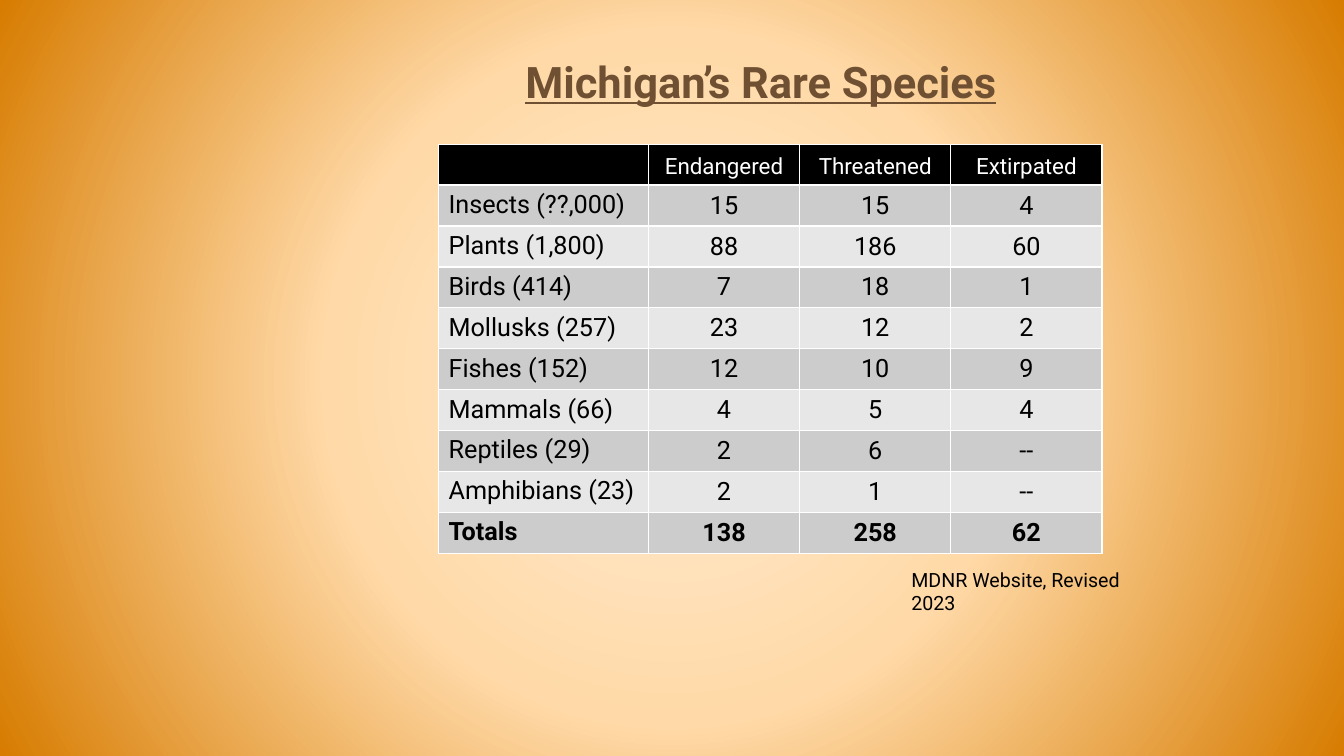
"""Build a slide with a table of Michigan's rare species."""
from dataclasses import dataclass

from pptx import Presentation, oxml
from pptx import util as u
from pptx.dml.color import RGBColor
from pptx.enum import text
from pptx.oxml import ns

SLIDE_WIDTH, SLIDE_HEIGHT = u.Inches(13.33), u.Inches(7.5)
FONT = "Roboto"
BLACK = RGBColor(0x00, 0x00, 0x00)
WHITE = RGBColor(0xFF, 0xFF, 0xFF)
BROWN = RGBColor(0x70, 0x50, 0x32)
DARK_BAND = RGBColor(0xCC, 0xCC, 0xCC)
LIGHT_BAND = RGBColor(0xE7, 0xE7, 0xE7)
CREAM = RGBColor(0xFF, 0xEC, 0xD3)
PEACH = RGBColor(0xFF, 0xD9, 0xA7)
ORANGE = RGBColor(0xD7, 0x7C, 0x01)
LEFT, CENTER = text.PP_ALIGN.LEFT, text.PP_ALIGN.CENTER
TOP, MIDDLE, BOTTOM = (
    text.MSO_ANCHOR.TOP, text.MSO_ANCHOR.MIDDLE, text.MSO_ANCHOR.BOTTOM)


@dataclass(frozen=True)
class Box:
    """A frame in percent of the slide's width and height."""
    left: float
    top: float
    width: float
    height: float

    def lengths(self) -> tuple[int, int, int, int]:
        """Return left, top, width and height as slide lengths."""
        return (across(self.left), down(self.top),
                across(self.width), down(self.height))


@dataclass(frozen=True)
class Stop:
    """A gradient stop with position and opacity in percent."""
    position: int
    color: RGBColor
    opacity: int = 100


@dataclass(frozen=True)
class Species:
    """One row of species counts."""
    group: str
    endangered: str
    threatened: str
    extirpated: str
    bold: bool = False

    def values(self) -> tuple[str, str, str, str]:
        """Return the texts of the row from left to right."""
        return self.group, self.endangered, self.threatened, self.extirpated


TITLE_BOX = Box(21.91, 2.4, 69.39, 16.67)
TABLE_BOX = Box(32.63, 19.07, 49.37, 54.13)
NOTE_BOX = Box(67.07, 74.4, 20.26, 4.53)
COLUMN_SHARES = (15.62, 11.25, 11.25, 11.25)
STOPS = (Stop(0, CREAM), Stop(45, PEACH, 92), Stop(100, ORANGE, 68))
ROWS = (
    Species("", "Endangered", "Threatened", "Extirpated"),
    Species("Insects (??,000)", "15", "15", "4"),
    Species("Plants (1,800)", "88", "186", "60"),
    Species("Birds (414)", "7", "18", "1"),
    Species("Mollusks (257)", "23", "12", "2"),
    Species("Fishes (152)", "12", "10", "9"),
    Species("Mammals (66)", "4", "5", "4"),
    Species("Reptiles (29)", "2", "6", "--"),
    Species("Amphibians (23)", "2", "1", "--"),
    Species("Totals", "138", "258", "62", bold=True),
)


def across(percent: float) -> int:
    """Return a share of the slide's width."""
    return round(SLIDE_WIDTH * percent / 100)


def down(percent: float) -> int:
    """Return a share of the slide's height."""
    return round(SLIDE_HEIGHT * percent / 100)


def write(frame, words: str, *, size: float, color: RGBColor = BLACK,
          bold: bool = False, underline: bool = False, align=LEFT) -> None:
    """Write one formatted paragraph into a text frame."""
    paragraph = frame.paragraphs[0]
    paragraph.alignment = align
    font = paragraph.font
    if words:
        run = paragraph.add_run()
        run.text = words
        font = run.font
    font.name, font.size = FONT, u.Pt(size)
    font.bold, font.underline = bold, underline
    font.color.rgb = color


def paint_background(slide) -> None:
    """Fill the background with a circular gradient."""
    slide.background.fill.solid()
    properties = slide.element.find(".//" + ns.qn("p:bgPr"))
    stops = "".join(
        f'<a:gs pos="{stop.position * 1000}"><a:srgbClr val="{stop.color}">'
        f'<a:alpha val="{stop.opacity * 1000}"/></a:srgbClr></a:gs>'
        for stop in STOPS)
    gradient = oxml.parse_xml(
        f'<a:gradFill {ns.nsdecls("a")} rotWithShape="1">'
        f'<a:gsLst>{stops}</a:gsLst><a:path path="circle">'
        '<a:fillToRect l="50000" t="50000" r="50000" b="50000"/>'
        '</a:path></a:gradFill>')
    properties.replace(properties[0], gradient)


def outline_cell(cell, color: RGBColor, width: float) -> None:
    """Draw all four borders of a table cell."""
    properties = cell._tc.get_or_add_tcPr()
    for index, side in enumerate(("lnL", "lnR", "lnT", "lnB")):
        properties.insert(index, oxml.parse_xml(
            f'<a:{side} {ns.nsdecls("a")} w="{u.Pt(width)}"><a:solidFill>'
            f'<a:srgbClr val="{color}"/></a:solidFill></a:{side}>'))


def add_title(slide) -> None:
    """Place and format the slide's title."""
    title = slide.shapes.title
    title.left, title.top, title.width, title.height = TITLE_BOX.lengths()
    title.text_frame.vertical_anchor = MIDDLE
    write(title.text_frame, "Michigan’s Rare Species", size=31, color=BROWN,
          bold=True, underline=True, align=CENTER)


def add_species_table(slide) -> None:
    """Add the table of species counts."""
    table = slide.shapes.add_table(
        len(ROWS), len(COLUMN_SHARES), *TABLE_BOX.lengths()).table
    for column, share in zip(table.columns, COLUMN_SHARES):
        column.width = across(share)
    for row_index, species in enumerate(ROWS):
        table.rows[row_index].height = down(TABLE_BOX.height / len(ROWS))
        header = row_index == 0
        band = DARK_BAND if row_index % 2 else LIGHT_BAND
        for column_index, words in enumerate(species.values()):
            cell = table.cell(row_index, column_index)
            label = column_index == 0
            cell.fill.solid()
            cell.fill.fore_color.rgb = BLACK if header else band
            cell.vertical_anchor = BOTTOM if header else TOP if label else MIDDLE
            outline_cell(cell, WHITE, 1)
            write(cell.text_frame, words, size=16 if header else 18,
                  color=WHITE if header else BLACK, bold=species.bold,
                  align=LEFT if label else CENTER)


def add_note(slide) -> None:
    """Add the source note under the table."""
    frame = slide.shapes.add_textbox(*NOTE_BOX.lengths()).text_frame
    frame.word_wrap = True
    write(frame, "MDNR Website, Revised 2023", size=14)


def main() -> None:
    """Build and save the presentation."""
    presentation = Presentation()
    presentation.slide_width = SLIDE_WIDTH
    presentation.slide_height = SLIDE_HEIGHT
    slide = presentation.slides.add_slide(presentation.slide_layouts[5])
    paint_background(slide)
    add_title(slide)
    add_species_table(slide)
    add_note(slide)
    presentation.save("out.pptx")


if __name__ == "__main__":
    main()
